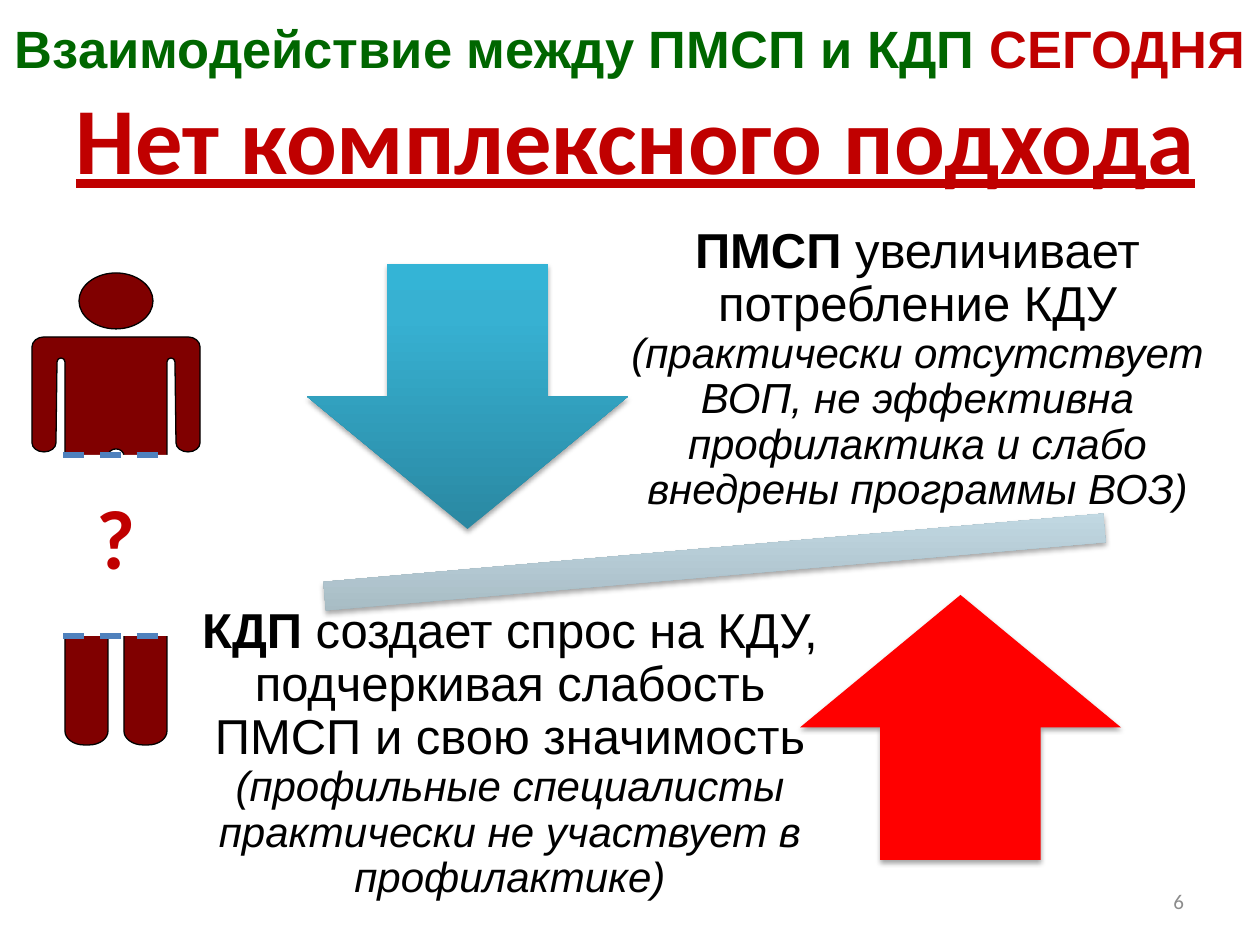
"""Build a slide on how primary care and diagnostic clinics interact today."""
import math
from dataclasses import dataclass, field
from typing import Any, Iterable, Optional

import pptx
import pptx.dml.color
import pptx.enum.dml
import pptx.enum.shapes
import pptx.enum.text
import pptx.oxml
import pptx.oxml.ns
import pptx.util

KIND = pptx.enum.shapes.MSO_SHAPE
ALIGN = pptx.enum.text.PP_ALIGN
ANCHOR = pptx.enum.text.MSO_ANCHOR
SCALE = 914400 / 126
BEND = 0.55
NS = pptx.oxml.ns.nsdecls("a")
RED, BLACK = "C00000", "000000"
Box = tuple[int, int, int, int]
Point = tuple[float, float]


@dataclass
class Run:
    text: str
    size: int
    hue: str = BLACK
    name: str = "Arial"
    form: dict[str, Any] = field(default_factory=dict)


@dataclass
class Label:
    box: Box
    runs: list[Run]
    align: Any = ALIGN.CENTER
    anchor: Any = ANCHOR.TOP
    inset: Box = (13, 6, 13, 6)
    lead: float = 1.0


@dataclass
class Block:
    kind: Any
    box: Box
    stops: list[tuple[int, str]]
    turn: int = 0
    shade: bool = True


@dataclass
class Arc:
    x: int
    y: int
    wide: int
    high: int
    start: int
    end: int

    def points(self) -> list[Point]:
        """Give four curve points for each quarter turn."""
        sign = 1 if self.end > self.start else -1
        out = []
        for turn in range(self.start, self.end, 90 * sign):
            a, b = math.radians(turn), math.radians(turn + 90 * sign)
            for t, bend in ((a, 0), (a, BEND * sign), (b, -BEND * sign), (b, 0)):
                out.append((self.x + self.wide * (math.cos(t) - bend * math.sin(t)),
                            self.y + self.high * (math.sin(t) + bend * math.cos(t))))
        return out


HALF = [Arc(0, 183, 8, 7, 270, 360), Arc(27, 287, 19, 15, 180, 90),
        Arc(32, 287, 19, 15, 90, 0), Arc(55, 89, 4, 4, 180, 360),
        Arc(72, 170, 12, 9, 180, 0), Arc(72, 74, 12, 10, 0, -90)]
HEAD = Arc(0, 28, 37, 28, 0, 360)
TALL = 302


def px(num: float) -> pptx.util.Emu:
    """Turn px into EMU."""
    return pptx.util.Emu(round(num * SCALE))


def rgb(hue: str) -> pptx.dml.color.RGBColor:
    """Turn a hex string into a colour."""
    return pptx.dml.color.RGBColor.from_string(hue)


def put(item: Any, form: dict[str, Any]) -> None:
    """Set each attribute in the dict."""
    for key, value in form.items():
        setattr(item, key, value)


def paint(shape: Any, hue: str) -> None:
    """Give the shape a plain fill."""
    shape.fill.solid()
    shape.fill.fore_color.rgb = rgb(hue)


def blend(shape: Any, stops: list[tuple[int, str]]) -> None:
    """Give the shape a gradient that runs up the page."""
    shape.fill.gradient()
    props = shape._element.spPr
    marks = "".join(f'<a:gs pos="{at * 1000}"><a:srgbClr val="{hue}"/></a:gs>'
                    for at, hue in stops)
    fresh = pptx.oxml.parse_xml(
        f'<a:gradFill {NS} rotWithShape="0"><a:gsLst>{marks}</a:gsLst>'
        '<a:lin ang="16200000" scaled="0"/></a:gradFill>')
    props.replace(props.find(pptx.oxml.ns.qn("a:gradFill")), fresh)


def cast(shape: Any) -> None:
    """Add a soft shadow below the shape."""
    effect = shape._element.spPr.find(pptx.oxml.ns.qn("a:effectLst"))
    effect.append(pptx.oxml.parse_xml(
        f'<a:outerShdw {NS} blurRad="39370" dist="22860" dir="5400000" rotWithShape="0">'
        '<a:srgbClr val="000000"><a:alpha val="35000"/></a:srgbClr></a:outerShdw>'))


def block(slide: Any, item: Block) -> None:
    """Draw a preset shape."""
    shape = slide.shapes.add_shape(item.kind, *map(px, item.box))
    shape.rotation = item.turn
    shape.shadow.inherit = False
    shape.line.fill.background()
    if len(item.stops) > 1:
        blend(shape, item.stops)
    else:
        paint(shape, item.stops[0][1])
    if item.shade:
        cast(shape)


def curve(shape: Any) -> None:
    """Merge the last three of each four points into a curve."""
    tags = map(pptx.oxml.ns.qn, ("a:moveTo", "a:lnTo"))
    steps = list(shape._element.iter(*tags))
    for i in range(0, len(steps), 4):
        bow = pptx.oxml.parse_xml(f"<a:cubicBezTo {NS}/>")
        steps[i + 1].addprevious(bow)
        for step in steps[i + 1:i + 4]:
            bow.append(step[0])
            step.getparent().remove(step)


def body(slide: Any, mid: int, top: int, high: int) -> None:
    """Draw a human figure, mirrored about its middle."""
    right = [point for arc in HALF for point in arc.points()]
    left = [(-x, y) for x, y in reversed(right)]

    def place(points: Iterable[Point]) -> list[tuple[int, int]]:
        return [(px(mid + x), px(top + y * high / TALL)) for x, y in points]

    torso, head = place(right + left), place(HEAD.points())
    maker = slide.shapes.build_freeform(*torso[0], scale=1.0)
    maker.add_line_segments(torso[1:], close=False)
    maker.move_to(*head[0])
    maker.add_line_segments(head[1:], close=False)
    shape = maker.convert_to_shape()
    curve(shape)
    shape.shadow.inherit = False
    paint(shape, "800000")
    shape.line.color.rgb = rgb(BLACK)
    shape.line.width = 0


def dash(slide: Any, left: int, right: int, top: int) -> None:
    """Draw a level dashed line."""
    line = slide.shapes.add_connector(
        pptx.enum.shapes.MSO_CONNECTOR.STRAIGHT, *map(px, (left, top, right, top)))
    line.line.color.rgb = rgb("4F81BD")
    put(line.line, {"width": pptx.util.Pt(3),
                    "dash_style": pptx.enum.dml.MSO_LINE.DASH})
    line._element.spPr.append(pptx.oxml.parse_xml(f"<a:effectLst {NS}/>"))


def label(slide: Any, item: Label, shape: Optional[Any] = None) -> None:
    """Write one paragraph in a placeholder or a new text box."""
    spots = [px(num) for num in item.box]
    shape = shape or slide.shapes.add_textbox(*spots)
    put(shape, dict(zip(("left", "top", "width", "height"), spots)))
    frame = shape.text_frame
    sides = ("margin_left", "margin_top", "margin_right", "margin_bottom")
    put(frame, {"word_wrap": True, "vertical_anchor": item.anchor,
                "auto_size": pptx.enum.text.MSO_AUTO_SIZE.NONE,
                **dict(zip(sides, map(px, item.inset)))})
    para = frame.paragraphs[0]
    put(para, {"alignment": item.align, "line_spacing": item.lead})
    for part in item.runs:
        run = para.add_run()
        run.text = part.text
        put(run.font, {"name": part.name, "size": pptx.util.Pt(part.size), **part.form})
        run.font.color.rgb = rgb(part.hue)


def claim(box: Box, who: str, what: str, why: str) -> Label:
    """Describe a statement with its subject and its reason."""
    runs = [Run(who, 28, form={"bold": True}), Run(what, 28),
            Run(why, 24, form={"italic": True})]
    return Label(box, runs, anchor=ANCHOR.MIDDLE, inset=(28, 28, 28, 28), lead=0.9)


def main() -> None:
    """Build and save the slide."""
    deck = pptx.Presentation()
    put(deck, {"slide_width": px(1260), "slide_height": px(945)})
    slide = deck.slides.add_slide(deck.slide_layouts[5])
    bold = {"bold": True}
    label(slide, Label((0, 10, 1260, 105), [
        Run("Взаимодействие между ПМСП и КДП ", 30, "006600", form=bold),
        Run("СЕГОДНЯ", 30, RED, form=bold)], inset=(6, 6, 6, 6)), slide.shapes.title)
    for top, high in ((467, 278), (273, TALL)):
        body(slide, 116, top, high)
    block(slide, Block(KIND.ROUNDED_RECTANGLE, (10, 455, 210, 181),
                       [(0, "FFFFFF")], shade=False))
    for top in (455, 636):
        dash(slide, 63, 168, top)
    for item in (
        Block(KIND.MATH_MINUS, (182, 501, 1065, 122),
              [(0, "98AAB2"), (80, "C5DDE7"), (100, "C6DEE9")], 355),
        Block(KIND.DOWN_ARROW, (307, 264, 321, 265),
              [(0, "2A88A2"), (80, "37B1D2"), (100, "34B4D6")]),
        Block(KIND.UP_ARROW, (800, 595, 321, 265), [(0, "FF0000")]),
    ):
        block(slide, item)
    for item in (
        Label((74, 480, 84, 132), [Run("?", 48, RED, "Calibri", bold)]),
        claim((596, 231, 643, 278), "ПМСП", " увеличивает потребление КДУ ",
              "(практически отсутствует ВОП, не эффективна профилактика "
              "и слабо внедрены программы ВОЗ)"),
        claim((170, 615, 680, 278), "КДП",
              " создает спрос на КДУ, подчеркивая слабость ПМСП и свою значимость ",
              "(профильные специалисты практически не участвует в профилактике)"),
        Label((63, 74, 1144, 127), [Run("Нет комплексного подхода", 54, RED, "Calibri",
              {"bold": True, "underline": True})], ALIGN.LEFT, inset=(13, 6, 0, 6)),
        Label((903, 876, 294, 50), [Run("6", 12, "8C8C8C", "Calibri")],
              ALIGN.RIGHT, ANCHOR.MIDDLE),
    ):
        label(slide, item)
    deck.save("out.pptx")


if __name__ == "__main__":
    main()
